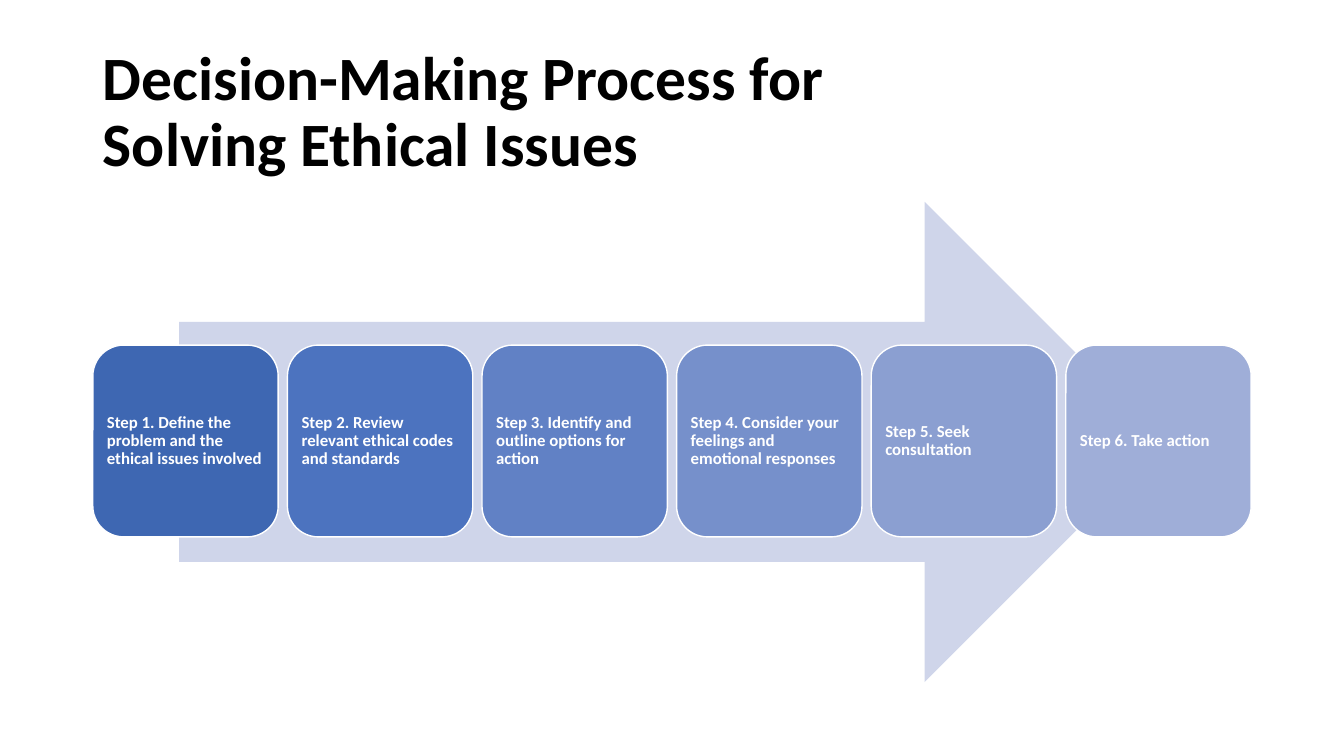
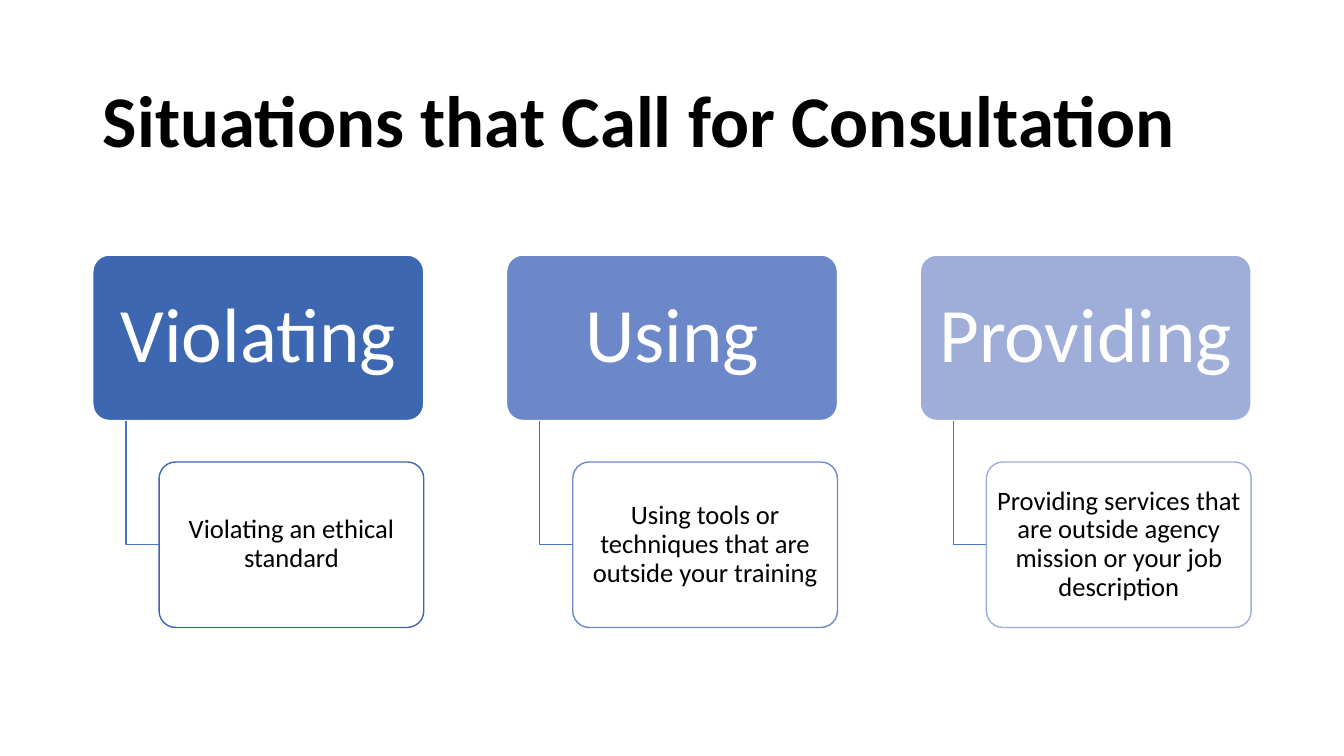
from pptx import Presentation
from pptx.dml.color import RGBColor
from pptx.enum.shapes import MSO_SHAPE as Preset
from pptx.enum.text import MSO_ANCHOR as Anchor, MSO_AUTO_SIZE as AutoSize, PP_ALIGN as Align
from pptx.util import Pt

COLORS = {
    "black": "000000", "white": "FFFFFF", "arrow": "CFD5EA", "elbow": "4A75C5",
    "step1": "3E67B2", "step2": "4C73BF", "step3": "6181C5",
    "step4": "7690CB", "step5": "8B9FD1", "step6": "9FAED8",
    "column1": "3E67B2", "column2": "6C88C8", "column3": "9FAED8",
}
FONT = "Calibri"
LEFT = 66.3
TITLE_WIDTH, TITLE_BOTTOM = 828, 133.2


def write(shape, text, size, color="white", bold=False, align=Align.LEFT, inset=(7.2, 3.6)):
    frame = shape.text_frame
    frame.word_wrap = True
    frame.auto_size = AutoSize.NONE
    frame.vertical_anchor = Anchor.MIDDLE
    frame.margin_left = frame.margin_right = Pt(inset[0])
    frame.margin_top = frame.margin_bottom = Pt(inset[1])
    paragraph = frame.paragraphs[0]
    paragraph.text = text
    paragraph.alignment = align
    paragraph.line_spacing = 0.9
    for run in paragraph.runs:
        run.font.name = FONT
        run.font.size = Pt(size)
        run.font.bold = bold
        run.font.color.rgb = RGBColor.from_string(COLORS[color])


def paint(shape, fill=None, line=None):
    shape.shadow.inherit = False
    for part, color in ((shape.fill, fill), (shape.line.fill, line)):
        if color:
            part.solid()
            part.fore_color.rgb = RGBColor.from_string(COLORS[color])
        else:
            part.background()
    if line:
        shape.line.width = Pt(1)


prs = Presentation()
prs.slide_width, prs.slide_height = Pt(960), Pt(540)

# Slides with their titles
slides = []
for heading, size, top in (
    ("Decision-Making Process for\vSolving Ethical Issues", 44, 28.8),
    ("Situations that Call for Consultation", 52, 44),
):
    slide = prs.slides.add_slide(prs.slide_layouts[5])
    title = slide.shapes.title
    title.left, title.top = Pt(LEFT), Pt(top)
    title.width, title.height = Pt(TITLE_WIDTH), Pt(TITLE_BOTTOM - top)
    write(title, heading, size, color="black", bold=True)
    slides.append(slide)
process, situations = slides

# Process: arrow behind a row of six steps
arrow = process.shapes.add_shape(Preset.RIGHT_ARROW, Pt(128), Pt(144.2), Pt(704), Pt(343))
paint(arrow, fill="arrow")

steps = [
    "Step 1. Define the problem and the ethical issues involved",
    "Step 2. Review relevant ethical codes and standards",
    "Step 3. Identify and outline options for action",
    "Step 4. Consider your feelings and emotional responses",
    "Step 5. Seek consultation",
    "Step 6. Take action",
]
STEP_WIDTH, STEP_PITCH = 132.4, 139
for i, step_text in enumerate(steps):
    step = process.shapes.add_shape(
        Preset.ROUNDED_RECTANGLE, Pt(LEFT + i * STEP_PITCH), Pt(246.5), Pt(STEP_WIDTH), Pt(137))
    paint(step, fill=f"step{i + 1}", line="white")
    write(step, step_text, 12, bold=True, inset=(3.6, 3.6))

# Situations: three heads, each with an elbow line to its detail
columns = [
    ("Violating", "Violating an ethical standard"),
    ("Using", "Using tools or techniques that are outside your training"),
    ("Providing", "Providing services that are outside agency mission or your job description"),
]
HEAD_TOP, HEAD_WIDTH, BOX_HEIGHT = 182.2, 236.4, 118.2
DETAIL_TOP, DETAIL_WIDTH, DETAIL_INDENT = 330, 189.1, 47.3
COLUMN_PITCH = 295.5
for i, (head_text, detail_text) in enumerate(columns):
    left = LEFT + i * COLUMN_PITCH
    color = f"column{i + 1}"

    head = situations.shapes.add_shape(
        Preset.ROUNDED_RECTANGLE, Pt(left), Pt(HEAD_TOP), Pt(HEAD_WIDTH), Pt(BOX_HEIGHT))
    paint(head, fill=color, line="white")
    write(head, head_text, 55, align=Align.CENTER, inset=(7.9, 5.8))

    stem = left + DETAIL_INDENT / 2
    middle = DETAIL_TOP + BOX_HEIGHT / 2
    outline = situations.shapes.build_freeform(Pt(stem), Pt(HEAD_TOP + BOX_HEIGHT))
    outline.add_line_segments(
        [(Pt(stem), Pt(middle)), (Pt(left + DETAIL_INDENT), Pt(middle))], close=False)
    paint(outline.convert_to_shape(), line="elbow")

    detail = situations.shapes.add_shape(
        Preset.ROUNDED_RECTANGLE, Pt(left + DETAIL_INDENT), Pt(DETAIL_TOP),
        Pt(DETAIL_WIDTH), Pt(BOX_HEIGHT))
    paint(detail, fill="white", line=color)
    write(detail, detail_text, 19, color="black", align=Align.CENTER, inset=(2.9, 2.2))

    for box in (head, detail):
        box.adjustments[0] = 0.1

prs.save("out.pptx")
